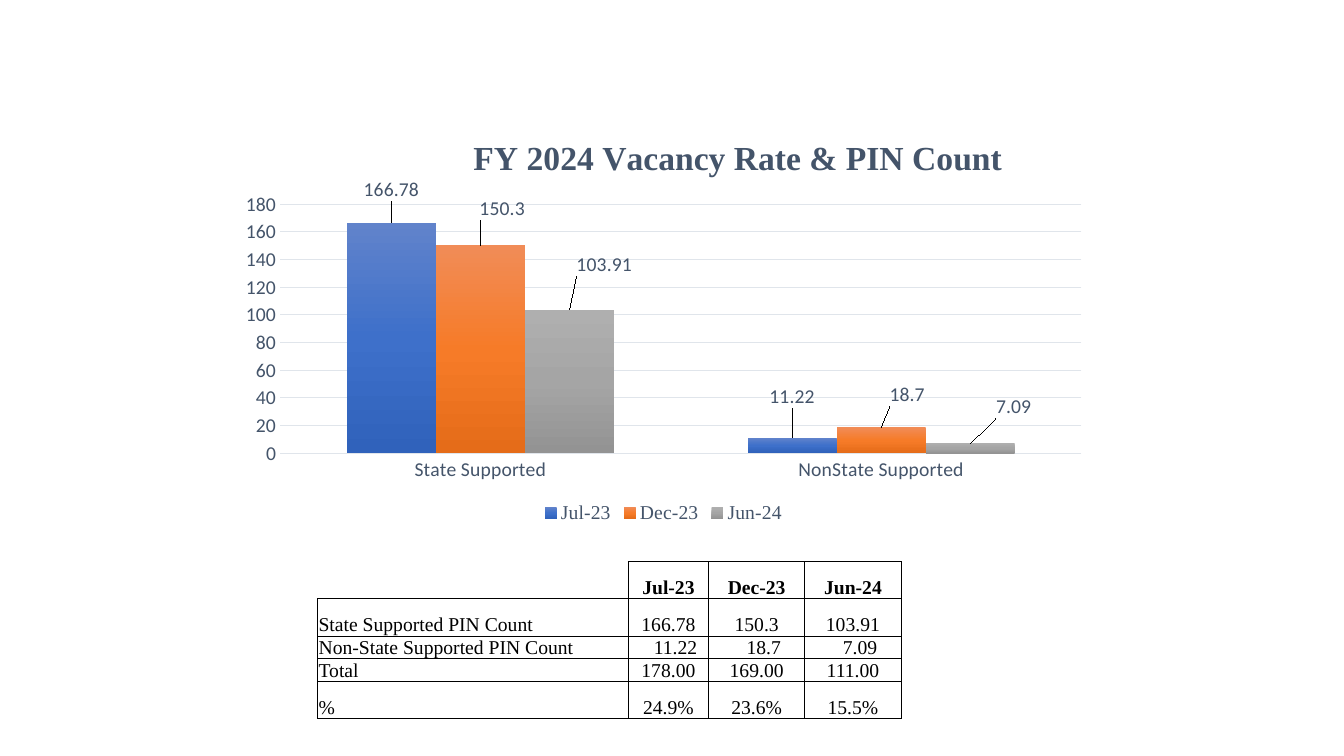
"""Build the vacancy rate slide: a clustered column chart above a PIN count table."""
from dataclasses import dataclass

from pptx import Presentation
from pptx.chart.data import CategoryChartData
from pptx.dml.color import RGBColor
from pptx.enum.chart import XL_CHART_TYPE, XL_LABEL_POSITION, XL_LEGEND_POSITION, XL_TICK_MARK
from pptx.enum.text import MSO_ANCHOR, PP_ALIGN
from pptx.oxml import parse_xml
from pptx.oxml.ns import nsdecls, qn
from pptx.util import Inches, Pt

COLUMNS = XL_CHART_TYPE.COLUMN_CLUSTERED
ABOVE = XL_LABEL_POSITION.OUTSIDE_END
BOTTOM = XL_LEGEND_POSITION.BOTTOM
NO_TICK = XL_TICK_MARK.NONE
CENTER, LEFT = PP_ALIGN.CENTER, PP_ALIGN.LEFT
LOW = MSO_ANCHOR.BOTTOM


@dataclass(frozen=True)
class Theme:
    """Fonts, colours and type sizes."""
    sans: str = "Calibri"
    serif: str = "Times New Roman"
    slate: str = "44546A"
    grid: str = "E0E5EB"
    ink: str = "000000"
    title_size: float = 24
    text_size: float = 14
    chart_line: float = 0.75
    table_line: float = 0.5


THEME = Theme()
SLIDE = (13.33, 7.5)
CHART_TITLE = "FY 2024 Vacancy Rate & PIN Count"
CATEGORIES = ["State Supported", "NonState Supported"]
SERIES = [
    {"name": "Jul-23", "values": (166.78, 11.22), "shades": ("6183CB", "3E70CA", "3062BB"),
     "label_shifts": ((0, -0.04), (0, -0.06))},
    {"name": "Dec-23", "values": (150.3, 18.7), "shades": ("F18C57", "F67B28", "E56C19"),
     "label_shifts": ((0.025, -0.05), (0.03, -0.04))},
    {"name": "Jun-24", "values": (103.91, 7.09), "shades": ("AFAFAF", "A5A5A5", "939393"),
     "label_shifts": ((0.04, -0.07), (0.05, -0.05))},
]
TABLE = [
    ["", "Jul-23", "Dec-23", "Jun-24"],
    ["State Supported PIN Count", "166.78", "150.3", "103.91"],
    ["Non-State Supported PIN Count", "11.22", "18.7", "7.09"],
    ["Total", "178.00", "169.00", "111.00"],
    ["%", "24.9%", "23.6%", "15.5%"],
]
CHART_BOX = (2.26, 1.12, 8.64, 4.12)
PLOT_SHARE = (0.06, 0.22, 0.92, 0.6)
TITLE_SHARE = (0.275, 0.04)
TABLE_CORNER = (3.15, 5.57)
COLUMN_WIDTHS = (3.08, 0.8, 0.95, 0.96)
ROW_HEIGHTS = (0.37, 0.37, 0.2, 0.2, 0.37)
INDENTED_ROW, INDENT, INSET = 2, 0.15, 0.01


def style(font, face, color=THEME.slate, size=THEME.text_size, bold=False):
    font.name, font.size, font.bold = face, Pt(size), bold
    font.color.rgb = RGBColor.from_string(color)


def draw_line(line):
    line.color.rgb = RGBColor.from_string(THEME.grid)
    line.width = Pt(THEME.chart_line)


def set_layout(parent, index, shares, inner=False, edge=True):
    for old in parent.findall(qn("c:layout")):
        parent.remove(old)
    target = '<c:layoutTarget val="inner"/>' if inner else ""
    modes = '<c:xMode val="edge"/><c:yMode val="edge"/>' if edge else ""
    places = "".join(f'<c:{key} val="{share}"/>' for key, share in zip("xywh", shares))
    parent.insert(index, parse_xml(
        f'<c:layout {nsdecls("c")}><c:manualLayout>{target}{modes}{places}'
        '</c:manualLayout></c:layout>'))


def fill_gradient(series, shades):
    stops = "".join(f'<a:gs pos="{step * 50000}"><a:srgbClr val="{shade}"/></a:gs>'
                    for step, shade in enumerate(shades))
    series._element.get_or_add_spPr().append(parse_xml(
        f'<a:gradFill {nsdecls("a")} rotWithShape="1"><a:gsLst>{stops}</a:gsLst>'
        '<a:lin ang="5400000" scaled="0"/></a:gradFill>'))


def style_axes(chart):
    category, value = chart.category_axis, chart.value_axis
    for axis in (category, value):
        axis.major_tick_mark = axis.minor_tick_mark = NO_TICK
        style(axis.tick_labels.font, THEME.sans)
    draw_line(category.format.line)
    value.format.line.fill.background()
    value.minimum_scale, value.maximum_scale, value.major_unit = 0, 180, 20
    draw_line(value.major_gridlines.format.line)


def add_vacancy_chart(page):
    data = CategoryChartData(number_format="General")
    data.categories = CATEGORIES
    for entry in SERIES:
        data.add_series(entry["name"], entry["values"])
    chart = page.shapes.add_chart(COLUMNS, *map(Inches, CHART_BOX), data).chart
    style(chart.font, THEME.sans, THEME.ink)

    chart.has_title = True
    span = chart.chart_title.text_frame.paragraphs[0].add_run()
    span.text = CHART_TITLE
    style(span.font, THEME.serif, size=THEME.title_size, bold=True)
    chart.chart_title.include_in_layout = False
    set_layout(chart.chart_title._element, 1, TITLE_SHARE)

    chart.has_legend = True
    chart.legend.position = BOTTOM
    chart.legend.include_in_layout = False
    style(chart.legend.font, THEME.serif)
    style_axes(chart)

    plot = chart.plots[0]
    plot.gap_width, plot.vary_by_categories = 150, False
    set_layout(plot._element.getparent(), 0, PLOT_SHARE, inner=True)
    for series, entry in zip(plot.series, SERIES):
        fill_gradient(series, entry["shades"])
        labels = series.data_labels
        labels.show_value, labels.position = True, ABOVE
        style(labels.font, THEME.sans)
        for index, shift in enumerate(entry["label_shifts"]):
            label = series.points[index].data_label
            label.position = ABOVE
            style(label.font, THEME.sans)
            set_layout(labels._element.findall(qn("c:dLbl"))[index], 1, shift, edge=False)


def draw_borders(cell, sides):
    properties = cell._tc.get_or_add_tcPr()
    for side in "LRTB":
        paint = (f'<a:solidFill><a:srgbClr val="{THEME.ink}"/></a:solidFill>'
                 if side in sides else "<a:noFill/>")
        properties.append(parse_xml(
            f'<a:ln{side} {nsdecls("a")} w="{Pt(THEME.table_line)}">{paint}</a:ln{side}>'))


def add_count_table(page):
    size = (sum(COLUMN_WIDTHS), sum(ROW_HEIGHTS))
    table = page.shapes.add_table(len(TABLE), len(TABLE[0]),
                                  *map(Inches, TABLE_CORNER + size)).table
    table.first_row = table.horz_banding = False
    for column, width in zip(table.columns, COLUMN_WIDTHS):
        column.width = Inches(width)
    for row, height in zip(table.rows, ROW_HEIGHTS):
        row.height = Inches(height)
    for down, texts in enumerate(TABLE):
        for across, text in enumerate(texts):
            cell = table.cell(down, across)
            draw_borders(cell, "LRTB" if text else "RB")
            cell.fill.background()
            indented = down == INDENTED_ROW and across > 0
            cell.margin_left = Inches(INDENT if indented else INSET)
            cell.margin_right = cell.margin_top = Inches(INSET)
            cell.margin_bottom = 0
            cell.vertical_anchor = LOW
            para = cell.text_frame.paragraphs[0]
            para.alignment = CENTER if across else LEFT
            if text:
                span = para.add_run()
                span.text = text
                style(span.font, THEME.serif, THEME.ink, bold=down == 0)


def main():
    deck = Presentation()
    deck.slide_width, deck.slide_height = map(Inches, SLIDE)
    page = deck.slides.add_slide(deck.slide_layouts[6])
    add_vacancy_chart(page)
    add_count_table(page)
    deck.save("out.pptx")


if __name__ == "__main__":
    main()
